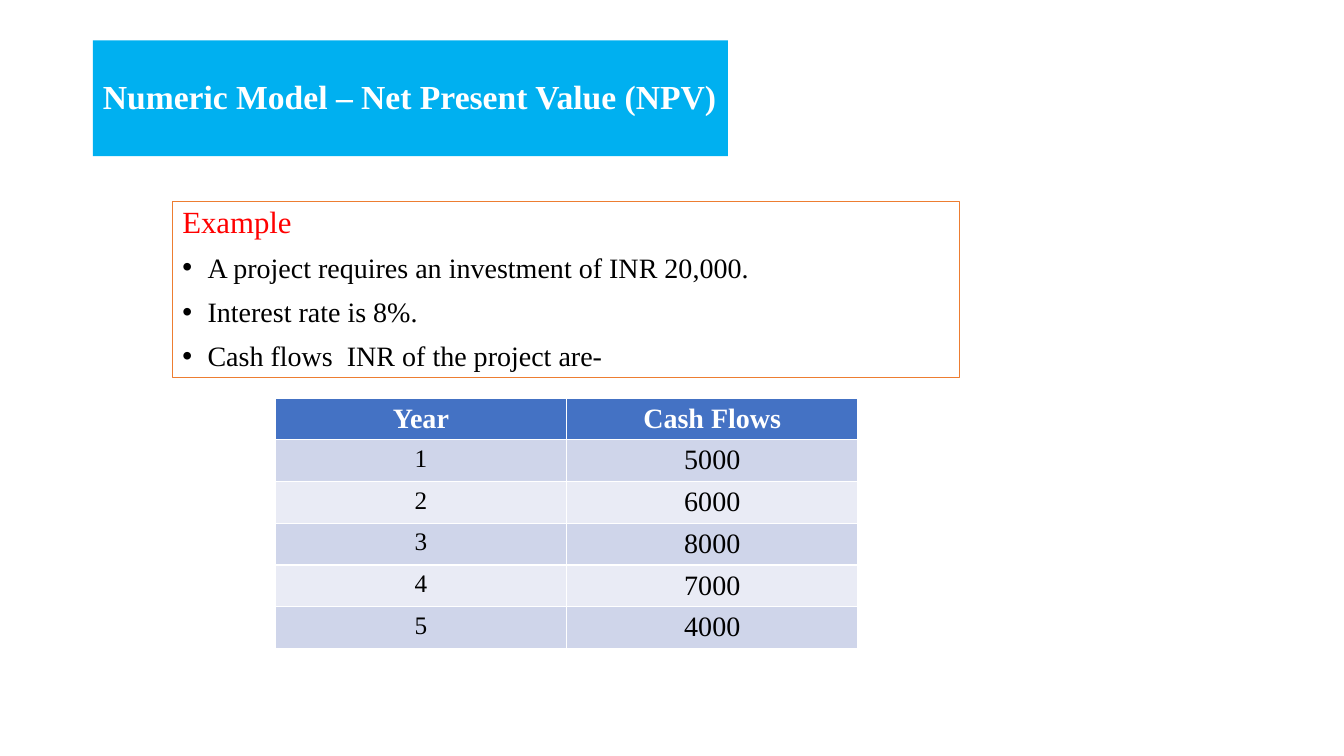
from lxml import etree
from pptx import Presentation
from pptx.dml.color import RGBColor
from pptx.enum.text import MSO_ANCHOR, MSO_AUTO_SIZE, PP_ALIGN
from pptx.oxml.ns import qn
from pptx.util import Inches, Pt

LEFT, CENTER, JUSTIFY = PP_ALIGN.LEFT, PP_ALIGN.CENTER, PP_ALIGN.JUSTIFY
TOP, MIDDLE = MSO_ANCHOR.TOP, MSO_ANCHOR.MIDDLE
NO_FIT = MSO_AUTO_SIZE.NONE

FONT = "Times New Roman"
WHITE = RGBColor(0xFF, 0xFF, 0xFF)
BLACK = RGBColor(0x00, 0x00, 0x00)
RED = RGBColor(0xFF, 0x00, 0x00)
ORANGE = RGBColor(0xED, 0x7D, 0x31)
SKY = RGBColor(0x00, 0xB0, 0xF0)
HEADER = RGBColor(0x44, 0x72, 0xC4)
BANDS = (RGBColor(0xE9, 0xEB, 0xF5), RGBColor(0xCF, 0xD5, 0xEA))

BULLETS = ("A project requires an investment of INR 20,000. ",
           "Interest rate is 8%. ",
           "Cash flows  INR of the project are-")
CASH_FLOWS = (("Year", "Cash Flows"), ("1", "5000"), ("2", "6000"),
              ("3", "8000"), ("4", "7000"), ("5", "4000"))


def write(p, text, size, color, align, bold=False):
    p.text = text
    p.alignment = align
    font = p.runs[0].font
    font.name, font.size, font.bold = FONT, Pt(size), bold
    font.color.rgb = color


def add_bullet(p):
    pPr = p._p.get_or_add_pPr()
    pPr.set("marL", str(Inches(0.25)))
    pPr.set("indent", str(Inches(-0.25)))
    etree.SubElement(pPr, qn("a:buFont"), typeface="Arial")
    etree.SubElement(pPr, qn("a:buChar"), char="•")


def format_title(title, left, top, width, height):
    title.left, title.top, title.width, title.height = left, top, width, height
    title.fill.solid()
    title.fill.fore_color.rgb = SKY
    tf = title.text_frame
    tf.auto_size, tf.vertical_anchor, tf.word_wrap = NO_FIT, MIDDLE, True
    p = tf.paragraphs[0]
    write(p, "Numeric Model – Net Present Value (NPV)", 24, WHITE, LEFT, True)
    p.line_spacing = 0.9


def add_example(s, left, top, width, height):
    box = s.shapes.add_textbox(left, top, width, height)
    box.line.color.rgb = ORANGE
    box.line.width = Pt(0.75)
    tf = box.text_frame
    tf.word_wrap, tf.vertical_anchor = True, TOP
    write(tf.paragraphs[0], "Example", 22, RED, LEFT)
    for text in BULLETS:
        p = tf.add_paragraph()
        write(p, text, 20, BLACK, JUSTIFY)
        add_bullet(p)
    for p in tf.paragraphs:
        p.line_spacing = 0.9
        p.space_before = Pt(10)


def add_cash_flows(s, left, top, width, height):
    rows, cols = len(CASH_FLOWS), len(CASH_FLOWS[0])
    table = s.shapes.add_table(rows, cols, left, top, width, height).table
    for r, values in enumerate(CASH_FLOWS):
        header = r == 0
        for c, value in enumerate(values):
            cell = table.cell(r, c)
            cell.margin_bottom = Inches(0.03)
            cell.fill.solid()
            cell.fill.fore_color.rgb = HEADER if header else BANDS[r % 2]
            size = 20 if header or c else 18
            write(cell.text_frame.paragraphs[0], value, size,
                  WHITE if header else BLACK, CENTER, header)


def main():
    prs = Presentation()
    prs.slide_width, prs.slide_height = Inches(13.33), Inches(7.5)
    s = prs.slides.add_slide(prs.slide_layouts[5])

    # Example box
    add_example(s, Inches(1.71), Inches(2), Inches(7.81), Inches(1.75))
    # Title banner
    format_title(s.shapes.title, Inches(0.92), Inches(0.4), Inches(6.3), Inches(1.15))
    # Cash flow table
    add_cash_flows(s, Inches(2.73), Inches(3.95), Inches(5.78), Inches(2.44))

    prs.save("out.pptx")


if __name__ == "__main__":
    main()
